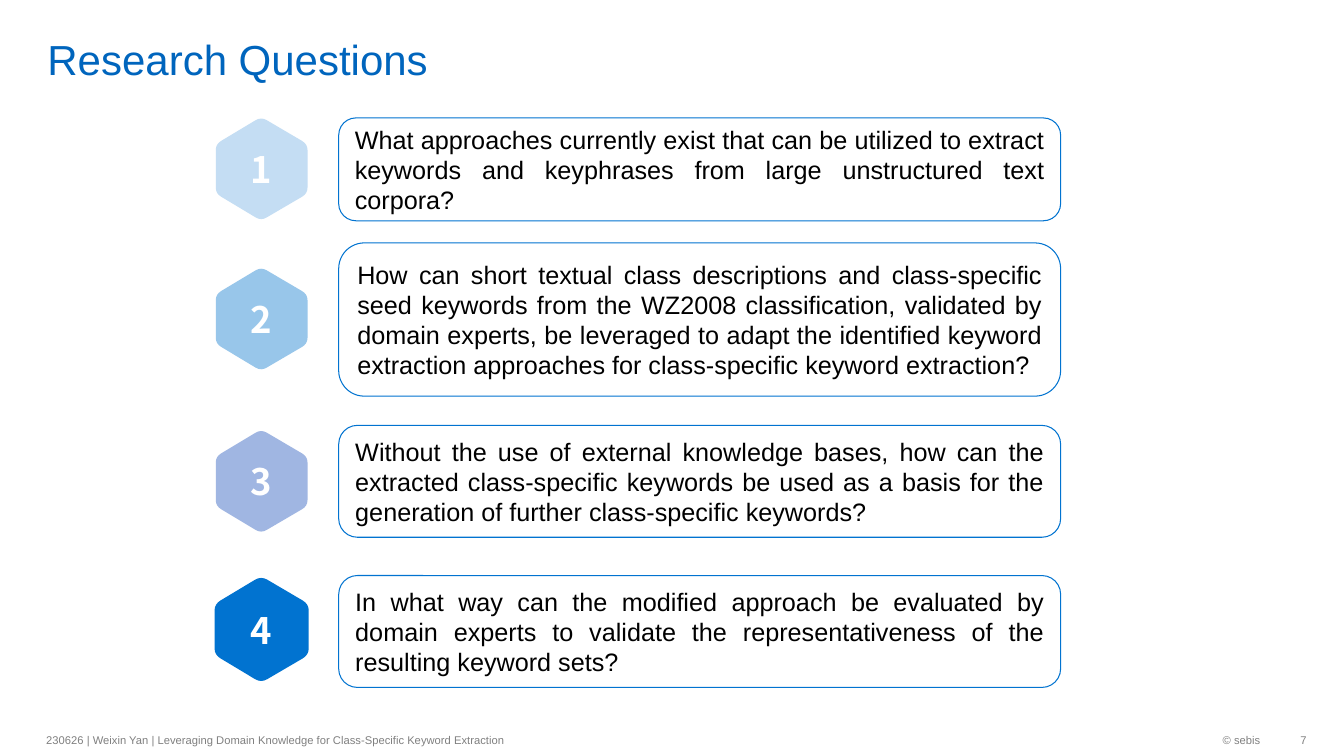
"""Build the research questions slide."""
from copy import deepcopy
from dataclasses import dataclass

from pptx import Presentation
from pptx.dml.color import RGBColor
from pptx.enum.shapes import MSO_SHAPE
from pptx.enum.text import MSO_ANCHOR, MSO_AUTO_SIZE, PP_ALIGN
from pptx.oxml.ns import qn
from pptx.shapes.base import BaseShape
from pptx.slide import Slide
from pptx.util import Inches, Pt

Point = tuple[float, float]


@dataclass(frozen=True)
class Theme:
    font: str = "Arial"
    badge_font: str = "Noto Sans CJK SC"
    title: str = "0065BD"
    line: str = "0173D0"
    ink: str = "000000"
    light: str = "FFFFFF"
    grey: str = "808080"
    title_size: int = 30
    badge_size: int = 26
    body_size: int = 18
    foot_size: int = 8


@dataclass(frozen=True)
class Question:
    text: str
    badge_top: float
    fill: str
    top: float
    height: float
    edge: bool = False


@dataclass(frozen=True)
class Footer:
    text: str
    left: float
    width: float
    align: PP_ALIGN = PP_ALIGN.RIGHT
    right_pad: float = 0.1


THEME = Theme()
QUESTIONS = [
    Question("What approaches currently exist that can be utilized to extract keywords "
             "and keyphrases from large unstructured text corpora?",
             1.18, "C4DDF3", 1.17, 1.02),
    Question("How can short textual class descriptions and class-specific seed keywords "
             "from the WZ2008 classification, validated by domain experts, be leveraged "
             "to adapt the identified keyword extraction approaches for class-specific "
             "keyword extraction?",
             2.67, "98C6EA", 2.41, 1.52),
    Question("Without the use of external knowledge bases, how can the extracted "
             "class-specific keywords be used as a basis for the generation of further "
             "class-specific keywords?",
             4.28, "A0B6E2", 4.22, 1.11),
    Question("In what way can the modified approach be evaluated by domain experts to "
             "validate the representativeness of the resulting keyword sets?",
             5.75, "0173D0", 5.71, 1.11, edge=True),
]
FOOTERS = [
    Footer("© sebis", 10.26, 2.34),
    Footer("7", 12.6, 0.36, right_pad=0),
    Footer("230626 | Weixin Yan | Leveraging Domain Knowledge for Class-Specific "
           "Keyword Extraction", 0.36, 6.3, PP_ALIGN.LEFT),
]
HEXAGON = [(0.45, -0.02), (0.91, 0.25), (0.91, 0.74),
           (0.45, 1.01), (0, 0.74), (0, 0.25)]
BADGE_LEFT = 2.14
ROUND = 0.12


def write(shape: BaseShape, text: str, size: int, color: str, align: PP_ALIGN,
          pads: tuple[float, float, float, float] = (0.1, 0.05, 0.1, 0.05),
          font: str = THEME.font, bold: bool = False,
          anchor: MSO_ANCHOR = MSO_ANCHOR.MIDDLE) -> None:
    frame = shape.text_frame
    frame.word_wrap = True
    frame.auto_size = MSO_AUTO_SIZE.NONE
    frame.vertical_anchor = anchor
    (frame.margin_left, frame.margin_top,
     frame.margin_right, frame.margin_bottom) = map(Inches, pads)
    para = frame.paragraphs[0]
    para.alignment = align
    run = para.add_run()
    run.text = text
    run.font.name = font
    run.font.size = Pt(size)
    run.font.bold = bold
    run.font.color.rgb = RGBColor.from_string(color)


def outline(shape: BaseShape, color: str, width: float) -> None:
    shape.line.color.rgb = RGBColor.from_string(color)
    shape.line.width = Pt(width)


def blend(start: Point, end: Point, share: float) -> Point:
    return (start[0] + share * (end[0] - start[0]),
            start[1] + share * (end[1] - start[1]))


def add_hexagon(slide: Slide, left: float, top: float) -> BaseShape:
    nodes, pulls = [], []
    for i, tip in enumerate(HEXAGON):
        prior, after = HEXAGON[i - 1], HEXAGON[(i + 1) % len(HEXAGON)]
        enter, leave = blend(tip, prior, ROUND / 2), blend(tip, after, ROUND / 2)
        nodes += [blend(tip, prior, ROUND), blend(enter, leave, 0.5),
                  blend(tip, after, ROUND)]
        pulls += [None, enter, leave]
    spots = [(Inches(left + x), Inches(top + y)) for x, y in nodes]
    form = slide.shapes.build_freeform(*spots[0])
    form.add_line_segments(spots[1:], close=True)
    shape = form.convert_to_shape()
    for line, pull in zip(shape.element.findall(".//" + qn("a:lnTo")), pulls[1:]):
        if pull:
            handle = deepcopy(line[0])
            handle.set("x", str(Inches(left + pull[0]) - shape.left))
            handle.set("y", str(Inches(top + pull[1]) - shape.top))
            line.tag = qn("a:quadBezTo")
            line.insert(0, handle)
    return shape


def add_badge(slide: Slide, number: int, item: Question) -> None:
    badge = add_hexagon(slide, BADGE_LEFT, item.badge_top)
    badge.shadow.inherit = False
    badge.fill.solid()
    badge.fill.fore_color.rgb = RGBColor.from_string(item.fill)
    if item.edge:
        outline(badge, item.fill, 1.75)
    else:
        badge.line.fill.background()
    write(badge, str(number), THEME.badge_size, THEME.light, PP_ALIGN.CENTER,
          font=THEME.badge_font, bold=True)


def add_box(slide: Slide, item: Question) -> None:
    box = slide.shapes.add_shape(MSO_SHAPE.ROUNDED_RECTANGLE, Inches(3.36),
                                 Inches(item.top), Inches(7.16), Inches(item.height))
    box.shadow.inherit = False
    box.fill.background()
    outline(box, THEME.line, 0.75)
    write(box, item.text, THEME.body_size, THEME.ink, PP_ALIGN.JUSTIFY,
          pads=(0.11, 0.12, 0.11, 0.12))


def add_footer(slide: Slide, foot: Footer) -> None:
    box = slide.shapes.add_textbox(Inches(foot.left), Inches(7.18),
                                   Inches(foot.width), Inches(0.32))
    write(box, foot.text, THEME.foot_size, THEME.grey, foot.align,
          pads=(0.1, 0.05, foot.right_pad, 0.05))


def add_title(slide: Slide) -> None:
    title = slide.shapes.title
    title.left, title.top = Inches(0.37), Inches(0.04)
    title.width, title.height = Inches(11.58), Inches(0.79)
    write(title, "Research Questions", THEME.title_size, THEME.title, PP_ALIGN.LEFT,
          pads=(0.1, 0, 0.1, 0), anchor=MSO_ANCHOR.BOTTOM)


def main() -> None:
    deck = Presentation()
    deck.slide_width, deck.slide_height = Inches(13.33), Inches(7.5)
    slide = deck.slides.add_slide(deck.slide_layouts[5])
    add_title(slide)
    for number, item in enumerate(QUESTIONS, 1):
        add_badge(slide, number, item)
        add_box(slide, item)
    for foot in FOOTERS:
        add_footer(slide, foot)
    deck.save("out.pptx")


if __name__ == "__main__":
    main()
